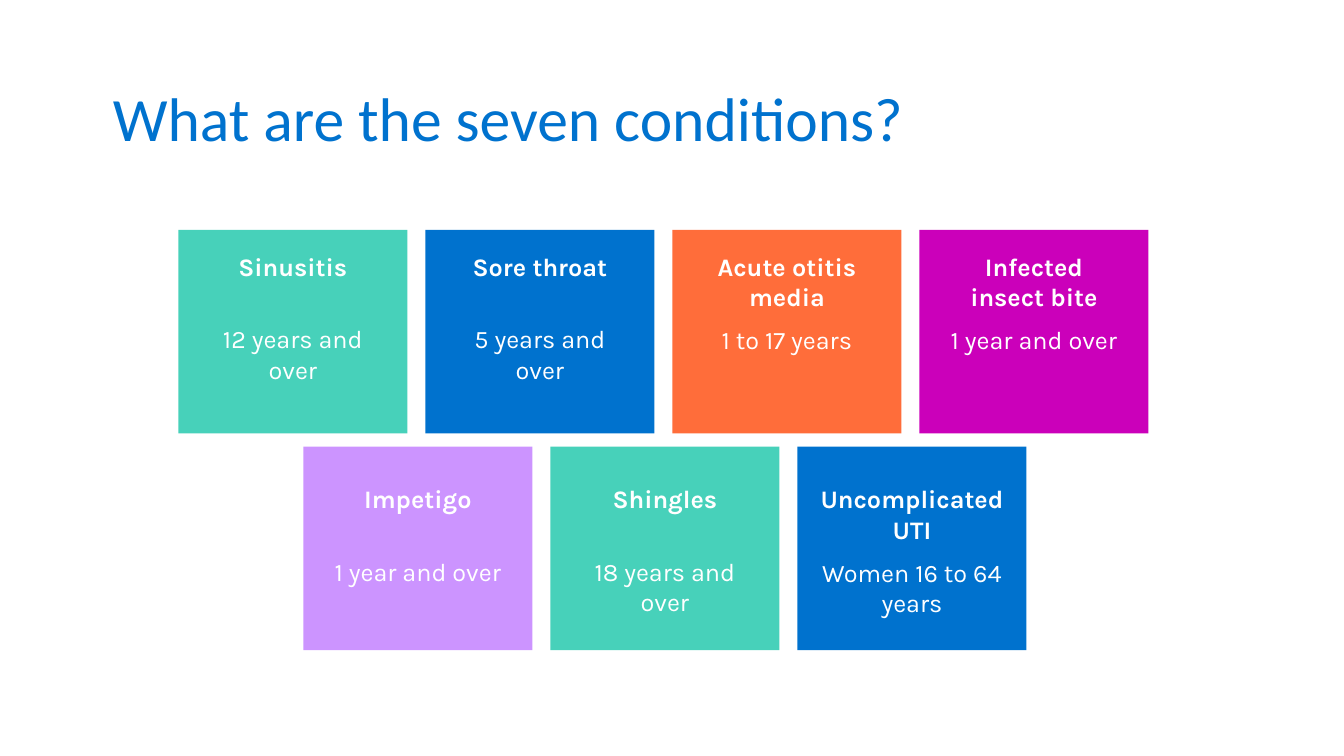
from pptx import Presentation
from pptx.dml.color import RGBColor
from pptx.enum.shapes import MSO_SHAPE
from pptx.enum.text import MSO_ANCHOR, PP_ALIGN
from pptx.util import Inches, Pt

TITLE = "What are the seven conditions?"

# Each row: left, top, top of the labels, then (condition, ages, colour,
# lines the name takes, label width)
ROWS = [
    (1.77, 2.28, 2.44, [
        ("Sinusitis", "12 years and over", "teal", 1, 1.93),
        ("Sore throat", "5 years and over", "blue", 1, 1.93),
        ("Acute otitis media", "1 to 17 years", "orange", 2, 1.93),
        ("Infected insect bite", "1 year and over", "magenta", 2, 1.93),
    ]),
    (3.01, 4.43, 4.75, [
        ("Impetigo", "1 year and over", "lilac", 1, 1.93),
        ("Shingles", "18 years and over", "teal", 1, 1.93),
        ("Uncomplicated UTI", "Women 16 to 64 years", "blue", 2, 2.08),
    ]),
]

THEME = {
    "teal": "47D1BA", "blue": "0072CE", "orange": "FF6D3A",
    "magenta": "CB00BA", "lilac": "CC94FF", "white": "FFFFFF",
    "title_font": "Calibri", "title_size": 44,
    "label_font": "Karla", "label_size": 18,
}

TILE_W, TILE_H, TILE_STEP = 2.27, 2.02, 2.45
LABEL_H = 1.45
AGES_GAP = 9.4    # points between a two-line name and its ages
NAME_LINE = 21    # points in one line of a name


def color(name):
    return RGBColor.from_string(THEME[name])


def add_run(paragraph, text, role, color_name, bold=False):
    run = paragraph.add_run()
    run.text = text
    run.font.name = THEME[f"{role}_font"]
    run.font.size = Pt(THEME[f"{role}_size"])
    run.font.bold = bold
    run.font.color.rgb = color(color_name)


def add_text_frame(slide, left, top, width, height):
    box = slide.shapes.add_textbox(Inches(left), Inches(top),
                                   Inches(width), Inches(height))
    box.text_frame.word_wrap = True
    return box.text_frame


def add_title(slide):
    frame = add_text_frame(slide, 1.02, 0.4, 11.39, 1.45)
    frame.vertical_anchor = MSO_ANCHOR.MIDDLE
    heading = frame.paragraphs[0]
    heading.line_spacing = 1.1
    add_run(heading, TITLE, "title", "blue")


def add_tile(slide, left, top, label_top, condition):
    name, ages, fill, name_lines, label_w = condition
    tile = slide.shapes.add_shape(MSO_SHAPE.RECTANGLE, Inches(left), Inches(top),
                                  Inches(TILE_W), Inches(TILE_H))
    tile.shadow.inherit = False
    tile.fill.solid()
    tile.fill.fore_color.rgb = color(fill)
    tile.line.fill.background()

    label_left = left + (TILE_W - label_w) / 2
    frame = add_text_frame(slide, label_left, label_top, label_w, LABEL_H)
    name_line = frame.paragraphs[0]
    add_run(name_line, name, "label", "white", bold=True)
    ages_line = frame.add_paragraph()
    # Ages line up across a row, whether the name takes one line or two
    ages_line.space_before = Pt(AGES_GAP + (2 - name_lines) * NAME_LINE)
    add_run(ages_line, ages, "label", "white")
    for line in (name_line, ages_line):
        line.alignment = PP_ALIGN.CENTER


def main():
    deck = Presentation()
    deck.slide_width, deck.slide_height = Inches(13.33), Inches(7.5)
    slide = deck.slides.add_slide(deck.slide_layouts[6])
    add_title(slide)
    for left, top, label_top, conditions in ROWS:
        for column, condition in enumerate(conditions):
            add_tile(slide, left + column * TILE_STEP, top, label_top, condition)
    deck.save("out.pptx")


if __name__ == "__main__":
    main()
